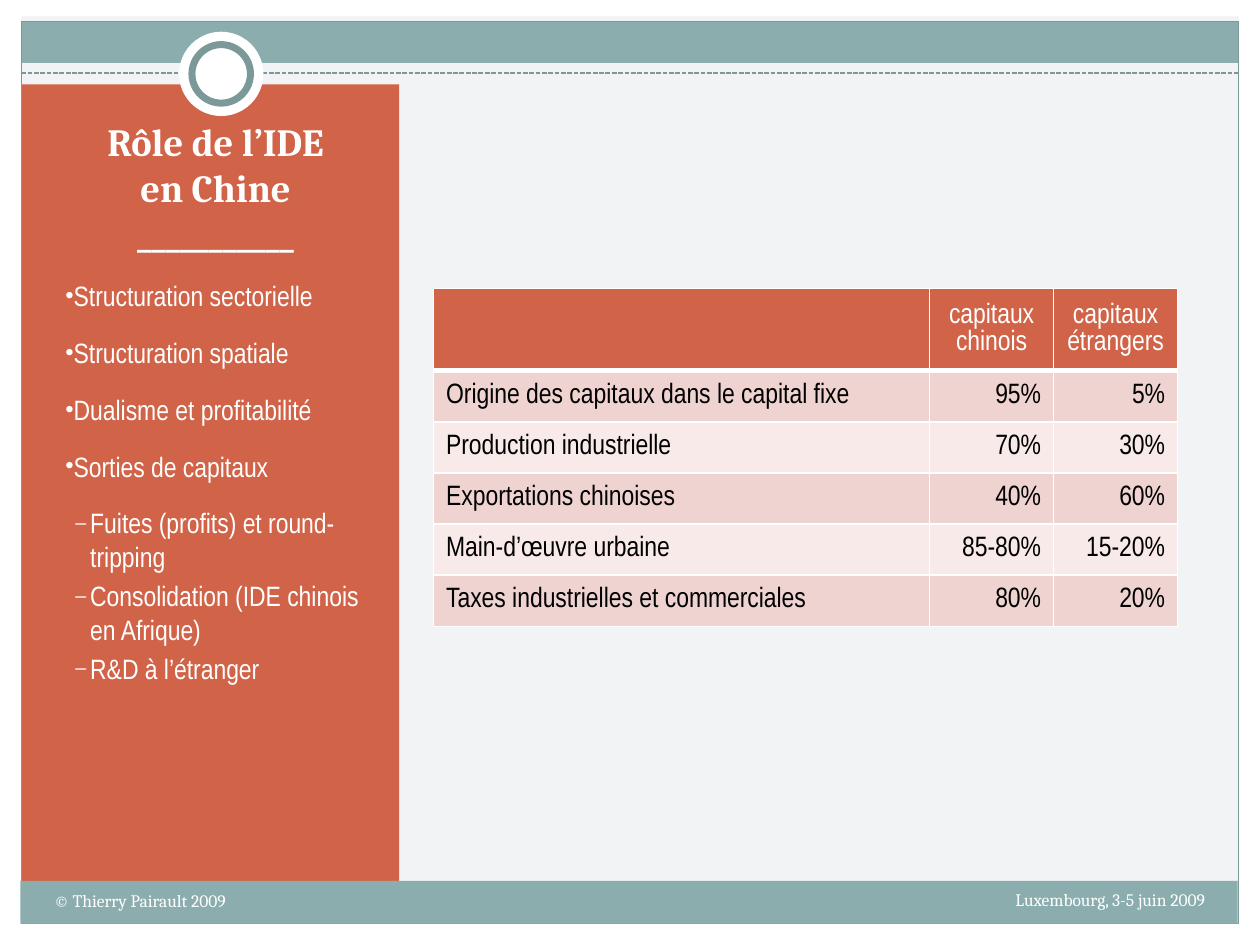
import pptx
import pptx.util
import pptx.oxml
import pptx.oxml.ns
from pptx.dml.color import RGBColor
from pptx.enum.dml import MSO_LINE
from pptx.enum.shapes import MSO_CONNECTOR, MSO_SHAPE
from pptx.enum.text import MSO_ANCHOR, MSO_AUTO_SIZE, PP_ALIGN
from pptx.util import Cm, Pt

WHITE = RGBColor(0xFF, 0xFF, 0xFF)
BLACK = RGBColor(0, 0, 0)
PAPER = RGBColor(0xF2, 0xF3, 0xF5)
TEAL = RGBColor(0x8C, 0xAD, 0xAE)
DARK_TEAL = RGBColor(0x7C, 0x99, 0x9A)
RUST = RGBColor(0xD1, 0x63, 0x49)
ROW_FILLS = (RGBColor(0xEE, 0xD3, 0xD0), RGBColor(0xF7, 0xEA, 0xE9))

SERIF = "Cambria"
NARROW = "Arial Narrow"

WIDTH, HEIGHT, EDGE = 25.4, 19.05, 0.43
INNER = WIDTH - 2 * EDGE

# (level, text)
TOPICS = (
    (0, "Structuration sectorielle"),
    (0, "Structuration spatiale"),
    (0, "Dualisme et profitabilité"),
    (0, "Sorties de capitaux"),
    (1, "Fuites (profits) et round-tripping"),
    (1, "Consolidation (IDE chinois en Afrique)"),
    (1, "R&D à l’étranger"),
)
# level: (bullet, bullet size %, left margin cm, space after pt)
LEVELS = {0: ("•", 85, 0, 10), 1: ("–", 70, 0.5, 0)}

SHARES = (
    ("", "capitaux chinois", "capitaux\vétrangers"),
    ("Origine des capitaux dans le capital fixe", "95%", "5%"),
    ("Production industrielle", "70%", "30%"),
    ("Exportations chinoises", "40%", "60%"),
    ("Main-d’œuvre urbaine", "85-80%", "15-20%"),
    ("Taxes industrielles et commerciales", "80%", "20%"),
)


def xml(tag, content="", **attributes):
    attrs = "".join(f' {name}="{value}"' for name, value in attributes.items())
    return pptx.oxml.parse_xml(
        f'<a:{tag} {pptx.oxml.ns.nsdecls("a")}{attrs}>{content}</a:{tag}>')


def add_block(s, left, top, width, height, fill=None, line=None, line_width=0.75,
              kind=MSO_SHAPE.RECTANGLE):
    sp = s.shapes.add_shape(kind, Cm(left), Cm(top), Cm(width), Cm(height))
    sp.shadow.inherit = False
    if fill is None:
        sp.fill.background()
    else:
        sp.fill.solid()
        sp.fill.fore_color.rgb = fill
    if line is None:
        sp.line.fill.background()
    else:
        sp.line.color.rgb = line
        sp.line.width = Pt(line_width)


def add_dashed_rule(s, y):
    line = s.shapes.add_connector(
        MSO_CONNECTOR.STRAIGHT, Cm(EDGE), Cm(y), Cm(WIDTH - EDGE), Cm(y))
    line.line.color.rgb = DARK_TEAL
    line.line.width = Pt(0.9)
    line.line.dash_style = MSO_LINE.SQUARE_DOT
    line.element.spPr.append(xml("effectLst"))


def write(p, text, size, font, color=WHITE, align=PP_ALIGN.LEFT, bold=False):
    p.text = text
    p.alignment = align
    for r in p.runs:
        r.font.size = Pt(size)
        r.font.name = font
        r.font.color.rgb = color
        r.font.bold = bold


def add_text_box(s, left, top, width, height):
    sp = s.shapes.add_textbox(Cm(left), Cm(top), Cm(width), Cm(height))
    tf = sp.text_frame
    tf.word_wrap = True
    return tf


def add_frame(s):
    add_block(s, EDGE, EDGE, INNER, 0.84, TEAL)
    add_block(s, 0, HEIGHT - EDGE, WIDTH, EDGE, WHITE)
    add_block(s, WIDTH - EDGE, 0, EDGE, HEIGHT, WHITE)
    add_block(s, 0, 0, WIDTH, 0.33, WHITE)
    add_block(s, 0, 0, EDGE, HEIGHT, WHITE)
    add_block(s, EDGE, 1.7, 7.62, 16.3, RUST)
    add_block(s, EDGE, EDGE, INNER, HEIGHT - 2 * EDGE, line=DARK_TEAL)
    add_dashed_rule(s, 1.47)
    add_block(s, 3.61, 0.64, 1.7, 1.7, WHITE, kind=MSO_SHAPE.OVAL)
    add_block(s, 3.87, 0.9, 1.18, 1.18, WHITE, DARK_TEAL, 4, MSO_SHAPE.OVAL)
    add_block(s, 0.41, 17.76, INNER, 0.86, TEAL)


def set_title(s):
    title = s.shapes.title
    title.left, title.top, title.width, title.height = (
        Cm(1.07), Cm(2.54), Cm(6.55), Cm(2.76))
    tf = title.text_frame
    tf.auto_size = MSO_AUTO_SIZE.NONE
    tf.vertical_anchor = MSO_ANCHOR.BOTTOM
    write(tf.paragraphs[0], "Rôle de l’IDE\ven Chine\v___________", 22, SERIF,
          align=PP_ALIGN.CENTER, bold=True)
    # Bring the title in front of the coloured panel
    title.element.getparent().append(title.element)


def add_topics(s):
    tf = add_text_box(s, 1.07, 5.5, 6.55, 11.51)
    for i, (level, text) in enumerate(TOPICS):
        bullet, size, margin, after = LEVELS[level]
        p = tf.add_paragraph() if i else tf.paragraphs[0]
        write(p, text, 16, NARROW)
        p.level = level
        p.space_before = Pt(3.2)
        p.space_after = Pt(after)
        pPr = p._p.get_or_add_pPr()
        pPr.set("marL", str(Cm(margin)))
        pPr.set("indent", str(Cm(-0.3)))
        pPr.append(xml("buClr", f'<a:srgbClr val="{WHITE}"/>'))
        pPr.append(xml("buSzPct", val=size * 1000))
        pPr.append(xml("buFont", typeface="Arial"))
        pPr.append(xml("buChar", char=bullet))


def set_borders(cell, top, bottom):
    """Draw white borders, with top and bottom widths in points."""
    tcPr = cell._tc.get_or_add_tcPr()
    widths = (("lnL", 1), ("lnR", 1), ("lnT", top), ("lnB", bottom))
    for i, (tag, width) in enumerate(widths):
        fill = f'<a:solidFill><a:srgbClr val="{WHITE}"/></a:solidFill>'
        tcPr.insert(i, xml(tag, fill, w=Pt(width)))


def format_cell(cell, row, col, text):
    header = row == 0
    cell.fill.solid()
    cell.fill.fore_color.rgb = RUST if header else ROW_FILLS[(row - 1) % 2]
    cell.vertical_anchor = MSO_ANCHOR.MIDDLE
    set_borders(cell, 3 if row == 1 else 1, 3 if header else 1)
    p = cell.text_frame.paragraphs[0]
    if header:
        cell.margin_left = cell.margin_right = 0
        cell.margin_top = cell.margin_bottom = Cm(0.15)
        write(p, text, 16, NARROW, align=PP_ALIGN.CENTER)
        p.line_spacing = 1.0
    else:
        write(p, text, 16, NARROW, BLACK, PP_ALIGN.RIGHT if col else PP_ALIGN.LEFT)


def add_shares_table(s):
    widths = (10, 2.5, 2.5)
    heights = (1.41,) + (1.03,) * (len(SHARES) - 1)
    table = s.shapes.add_table(len(SHARES), len(widths), Cm(8.74), Cm(5.82),
                               Cm(sum(widths)), Cm(sum(heights))).table
    for column, width in zip(table.columns, widths):
        column.width = Cm(width)
    for row, height in zip(table.rows, heights):
        row.height = Cm(height)
    for i, values in enumerate(SHARES):
        for j, text in enumerate(values):
            format_cell(table.cell(i, j), i, j, text)


def add_footers(s):
    place = add_text_box(s, 16.08, 17.79, 8.46, 1.02)
    write(place.paragraphs[0], "Luxembourg, 3-5 juin 2009", 10, SERIF,
          align=PP_ALIGN.RIGHT)
    credit = add_text_box(s, 0.84, 17.81, 9.4, 1.02)
    write(credit.paragraphs[0], "© Thierry Pairault 2009", 10, SERIF)


def main():
    prs = pptx.Presentation()
    prs.slide_width, prs.slide_height = Cm(WIDTH), Cm(HEIGHT)
    s = prs.slides.add_slide(prs.slide_layouts[5])
    s.background.fill.solid()
    s.background.fill.fore_color.rgb = PAPER
    add_frame(s)
    set_title(s)
    add_topics(s)
    add_shares_table(s)
    add_footers(s)
    prs.save("out.pptx")


if __name__ == "__main__":
    main()
